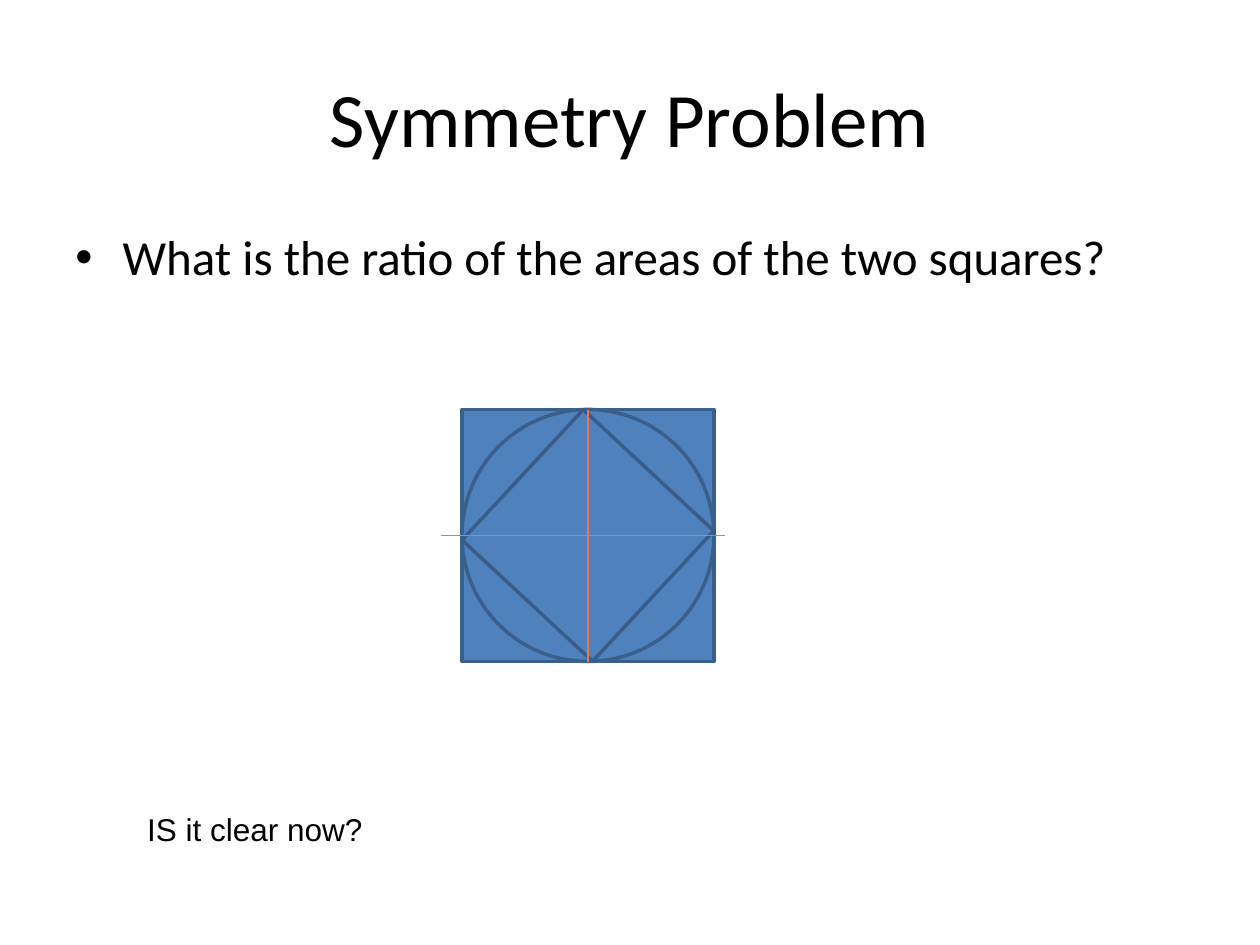
from dataclasses import dataclass

from lxml import etree
from pptx import Presentation
from pptx.dml.color import RGBColor
from pptx.enum import shapes, text
from pptx.oxml import ns
from pptx.util import Pt


@dataclass(frozen=True)
class Theme:
    heading_font: str = "Calibri"
    note_font: str = "Arial"
    title_size: float = 44
    body_size: float = 28
    note_size: float = 18
    ink: str = "000000"
    fill: str = "4F81BD"
    outline: str = "3A5F8C"
    inner_outline: str = "385D8A"
    axis: str = "EE7454"
    outline_width: float = 2
    axis_width: float = 0.75


THEME = Theme()


def place(shape, box):
    shape.left, shape.top, shape.width, shape.height = (Pt(value) for value in box)


def write(shape, words, font_name, size, alignment=text.PP_ALIGN.LEFT):
    paragraph = shape.text_frame.paragraphs[0]
    paragraph.text = words
    paragraph.alignment = alignment
    paragraph.font.name = font_name
    paragraph.font.size = Pt(size)
    paragraph.font.color.rgb = RGBColor.from_string(THEME.ink)
    return paragraph


def add_title(slide, box, words):
    title = slide.shapes.title
    place(title, box)
    title.text_frame.vertical_anchor = text.MSO_ANCHOR.MIDDLE
    write(title, words, THEME.heading_font, THEME.title_size, text.PP_ALIGN.CENTER)


def add_question(slide, box, words):
    question = slide.shapes.add_textbox(*(Pt(value) for value in box))
    question.text_frame.word_wrap = True
    paragraph = write(question, words, THEME.heading_font, THEME.body_size)
    paragraph.space_before = Pt(0.2 * THEME.body_size)
    # Hanging bullet
    properties = paragraph._p.get_or_add_pPr()
    properties.set("marL", str(Pt(27)))
    properties.set("indent", str(Pt(-27)))
    font = etree.Element(ns.qn("a:buFont"), typeface=THEME.note_font)
    bullet = etree.Element(ns.qn("a:buChar"), char="•")
    properties.insert_element_before(font, "a:tabLst", "a:defRPr", "a:extLst")
    properties.insert_element_before(bullet, "a:tabLst", "a:defRPr", "a:extLst")


def add_outlined(slide, kind, box, outline):
    shape = slide.shapes.add_shape(kind, *(Pt(value) for value in box))
    shape.shadow.inherit = False
    shape.fill.solid()
    shape.fill.fore_color.rgb = RGBColor.from_string(THEME.fill)
    shape.line.color.rgb = RGBColor.from_string(outline)
    shape.line.width = Pt(THEME.outline_width)
    return shape


def add_axis(slide, start, end):
    axis = slide.shapes.add_connector(
        shapes.MSO_CONNECTOR.STRAIGHT, *(Pt(value) for value in start + end))
    axis.line.color.rgb = RGBColor.from_string(THEME.axis)
    axis.line.width = Pt(THEME.axis_width)
    etree.SubElement(axis._element.spPr, ns.qn("a:effectLst"))
    return axis


def add_figure(slide, box):
    left, top, side, _ = box
    center_x, center_y = left + side / 2, top + side / 2
    rectangle = shapes.MSO_SHAPE.RECTANGLE

    # Outer square, its circle, and the turned square inside the circle
    square = add_outlined(slide, rectangle, box, THEME.outline)
    add_outlined(slide, shapes.MSO_SHAPE.OVAL, box, THEME.outline)
    inner = side / 2 ** 0.5
    inner_box = (center_x - inner / 2, center_y - inner / 2, inner, inner)
    turned = add_outlined(slide, rectangle, inner_box, THEME.inner_outline)
    turned.rotation = 312.9

    # Symmetry axes
    add_axis(slide, (left - 12, center_y), (left + side + 6, center_y))
    vertical = add_axis(slide, (center_x, top), (center_x, top + side))
    vertical.begin_connect(square, 0)
    vertical.end_connect(square, 2)


def add_note(slide, box, words):
    note = slide.shapes.add_textbox(*(Pt(value) for value in box))
    note.text_frame.word_wrap = False
    note.text_frame.auto_size = text.MSO_AUTO_SIZE.SHAPE_TO_FIT_TEXT
    write(note, words, THEME.note_font, THEME.note_size)


def main():
    presentation = Presentation()
    presentation.slide_width, presentation.slide_height = Pt(720), Pt(540)
    slide = presentation.slides.add_slide(presentation.slide_layouts.get_by_name("Title Only"))

    add_title(slide, (36, 21.6, 648, 90), "Symmetry Problem")
    add_question(slide, (36, 126, 648, 356.4),
                 "What is the ratio of the areas of the two squares?")
    add_figure(slide, (264, 234, 144, 144))
    add_note(slide, (77, 459.4, 142.6, 28.8), "IS it clear now?")

    presentation.save("out.pptx")


if __name__ == "__main__":
    main()
